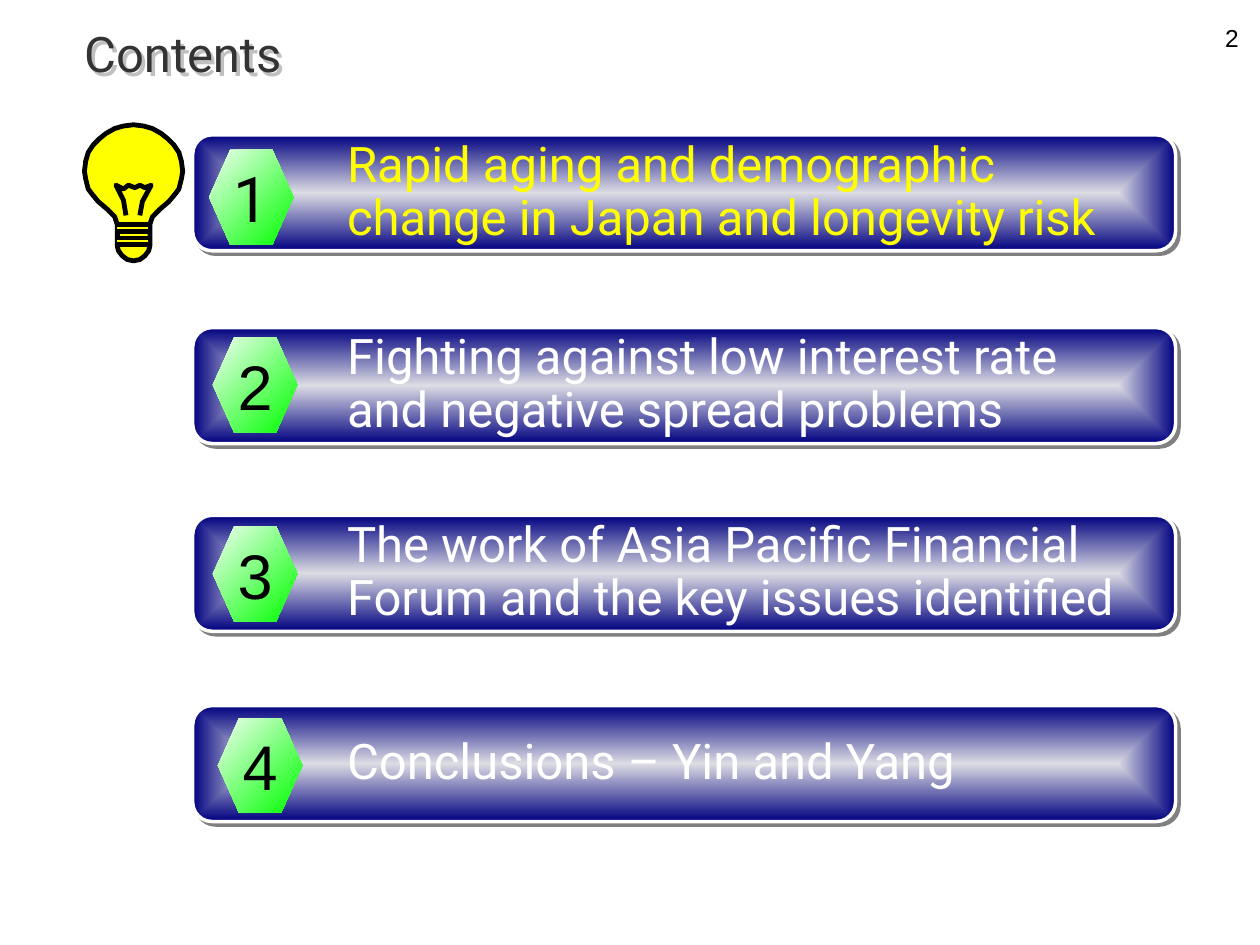
"""Build a contents slide with four numbered bars and a light bulb."""
from lxml.etree import SubElement
from pptx import Presentation
from pptx.dml.color import RGBColor
from pptx.enum.shapes import MSO_SHAPE as Preset
from pptx.enum.text import MSO_ANCHOR as Anchor, PP_ALIGN as Align
from pptx.oxml.ns import qn
from pptx.util import Inches, Pt

BLACK = RGBColor(0x00, 0x00, 0x00)
WHITE = RGBColor(0xFF, 0xFF, 0xFF)
YELLOW = RGBColor(0xFF, 0xFF, 0x00)
CHARCOAL = RGBColor(0x33, 0x33, 0x33)
GRAY = RGBColor(0x80, 0x80, 0x80)
SILVER = RGBColor(0xC0, 0xC0, 0xC0)
NAVY = RGBColor(0x00, 0x00, 0x80)
MIST = RGBColor(0xDC, 0xDC, 0xE4)
GREEN = RGBColor(0x00, 0xFF, 0x00)
MINT = RGBColor(0xF1, 0xFF, 0xF1)

WIDTH, HEIGHT = 10, 7.5
BAR_LEFT, BAR_WIDTH, BAR_HEIGHT = 1.53, 7.8, 0.92
BADGE_WIDTH, BADGE_HEIGHT = 0.67, 0.75

TITLE = "Contents"
PAGE_NUMBER = "2"
TOPICS = [
    dict(text="Rapid aging and demographic change in Japan and longevity risk",
         top=1.07, badge=(1.66, 1.19), color=YELLOW, font="Roboto"),
    dict(text="Fighting against low interest rate and negative spread problems",
         top=2.6, badge=(1.69, 2.68), color=WHITE, font="Arial"),
    dict(text="The work of Asia Pacific Financial Forum and the key issues identified",
         top=4.09, badge=(1.69, 4.18), color=WHITE, font="Arial"),
    dict(text="Conclusions – Yin and Yang",
         top=5.6, badge=(1.73, 5.7), color=WHITE, font="Arial"),
]

DRAWING_UNIT = Inches(0.01)
BULB_CENTER = 106
BULB_HALF = [
    (0, 99), (8, 100), (15, 102), (22, 106), (27, 110), (32, 115), (36, 121),
    (38, 128), (39, 136), (38, 142), (36, 150), (33, 154), (28, 160), (21, 166),
    (15, 172), (13, 178), (13, 195), (12, 199), (9, 203), (5, 206), (0, 207),
]
FILAMENT = [
    (100, 171), (98, 159), (93, 149), (92, 147), (98, 150), (102, 147),
    (107, 149), (111, 147), (115, 149), (120, 147), (113, 160), (111, 171),
]
SCREW = [
    (93, 178), (119, 178), (119, 184), (93, 184),
    (93, 189), (119, 189), (119, 194), (93, 194),
]


def write(shape, text, *, size, color, font="Roboto", align=Align.LEFT,
          anchor=Anchor.TOP, wrap=True, spacing=None, left=0.1, right=0.1):
    """Put one formatted paragraph into a shape."""
    frame = shape.text_frame
    frame.word_wrap, frame.vertical_anchor = wrap, anchor
    frame.margin_left, frame.margin_right = Inches(left), Inches(right)
    paragraph = frame.paragraphs[0]
    paragraph.alignment, paragraph.line_spacing = align, spacing
    run = paragraph.add_run()
    run.text = text
    run.font.size, run.font.name, run.font.color.rgb = Pt(size), font, color


def add_shadow(shape, color, distance):
    """Cast a hard shadow to the lower right."""
    shape.shadow.inherit = False
    effects = shape._element.spPr.find(qn("a:effectLst"))
    outer = SubElement(effects, qn("a:outerShdw"), dist=str(Pt(distance)),
                       dir="2700000", algn="ctr", rotWithShape="0")
    SubElement(outer, qn("a:srgbClr"), val=str(color))


def fill_gradient(shape, first, last):
    """Blend two colours diagonally."""
    shape.fill.gradient()
    shape.fill.gradient_angle = 315
    for stop, color in zip(shape.fill.gradient_stops, (first, last)):
        stop.color.rgb = color


def spread_from_center(shape):
    """Turn the diagonal blend into one that follows the outline."""
    gradient = shape._element.spPr.find(qn("a:gradFill"))
    gradient.remove(gradient.find(qn("a:lin")))
    route = SubElement(gradient, qn("a:path"), path="shape")
    SubElement(route, qn("a:fillToRect"),
               {side: "50000" for side in ("l", "t", "r", "b")})


def add_textbox(slide, left, top, width, height):
    return slide.shapes.add_textbox(*map(Inches, (left, top, width, height)))


def add_preset(slide, preset, left, top, width, height):
    return slide.shapes.add_shape(preset, *map(Inches, (left, top, width, height)))


def add_topic(slide, number, topic):
    """Add a bar with its numbered badge."""
    bar = add_preset(slide, Preset.ROUNDED_RECTANGLE,
                     BAR_LEFT, topic["top"], BAR_WIDTH, BAR_HEIGHT)
    fill_gradient(bar, MIST, NAVY)
    spread_from_center(bar)
    bar.line.color.rgb, bar.line.width = WHITE, Pt(2)
    add_shadow(bar, GRAY, 2.8)
    write(bar, topic["text"], size=28, color=topic["color"], anchor=Anchor.MIDDLE,
          spacing=0.9, left=1.18, right=0.39)

    badge = add_preset(slide, Preset.HEXAGON, *topic["badge"], BADGE_WIDTH, BADGE_HEIGHT)
    badge.adjustments[0] = 0.25
    fill_gradient(badge, MINT, GREEN)
    badge.line.fill.background()
    badge.shadow.inherit = False
    write(badge, str(number), size=36, color=BLACK, font=topic["font"],
          align=Align.CENTER, anchor=Anchor.MIDDLE, wrap=False)


def add_drawing(slide, contours, close):
    """Draw contours as one yellow freeform with a black line."""
    builder = slide.shapes.build_freeform(*contours[0][0], scale=DRAWING_UNIT)
    for index, contour in enumerate(contours):
        if index:
            builder.move_to(*contour[0])
        builder.add_line_segments(contour[1:], close=close)
    drawing = builder.convert_to_shape()
    drawing.fill.solid()
    drawing.fill.fore_color.rgb = YELLOW
    drawing.line.color.rgb, drawing.line.width = BLACK, Pt(2.75)
    drawing.shadow.inherit = False


def main():
    presentation = Presentation()
    presentation.slide_width, presentation.slide_height = Inches(WIDTH), Inches(HEIGHT)
    slide = presentation.slides.add_slide(presentation.slide_layouts[6])

    page = add_textbox(slide, 7.6, 0.13, 2.33, 0.52)
    write(page, PAGE_NUMBER, size=14, color=BLACK, font="Arial", align=Align.RIGHT)
    title = add_textbox(slide, 0.57, 0.14, 5.55, 0.29)
    write(title, TITLE, size=28, color=CHARCOAL)
    add_shadow(title, SILVER, 2.8)

    for number, topic in enumerate(TOPICS, start=1):
        add_topic(slide, number, topic)

    right = [(BULB_CENTER + x, y) for x, y in BULB_HALF]
    left = [(BULB_CENTER - x, y) for x, y in reversed(BULB_HALF[1:-1])]
    add_drawing(slide, [right + left], close=True)
    add_drawing(slide, [FILAMENT, SCREW], close=False)
    presentation.save("out.pptx")


if __name__ == "__main__":
    main()
